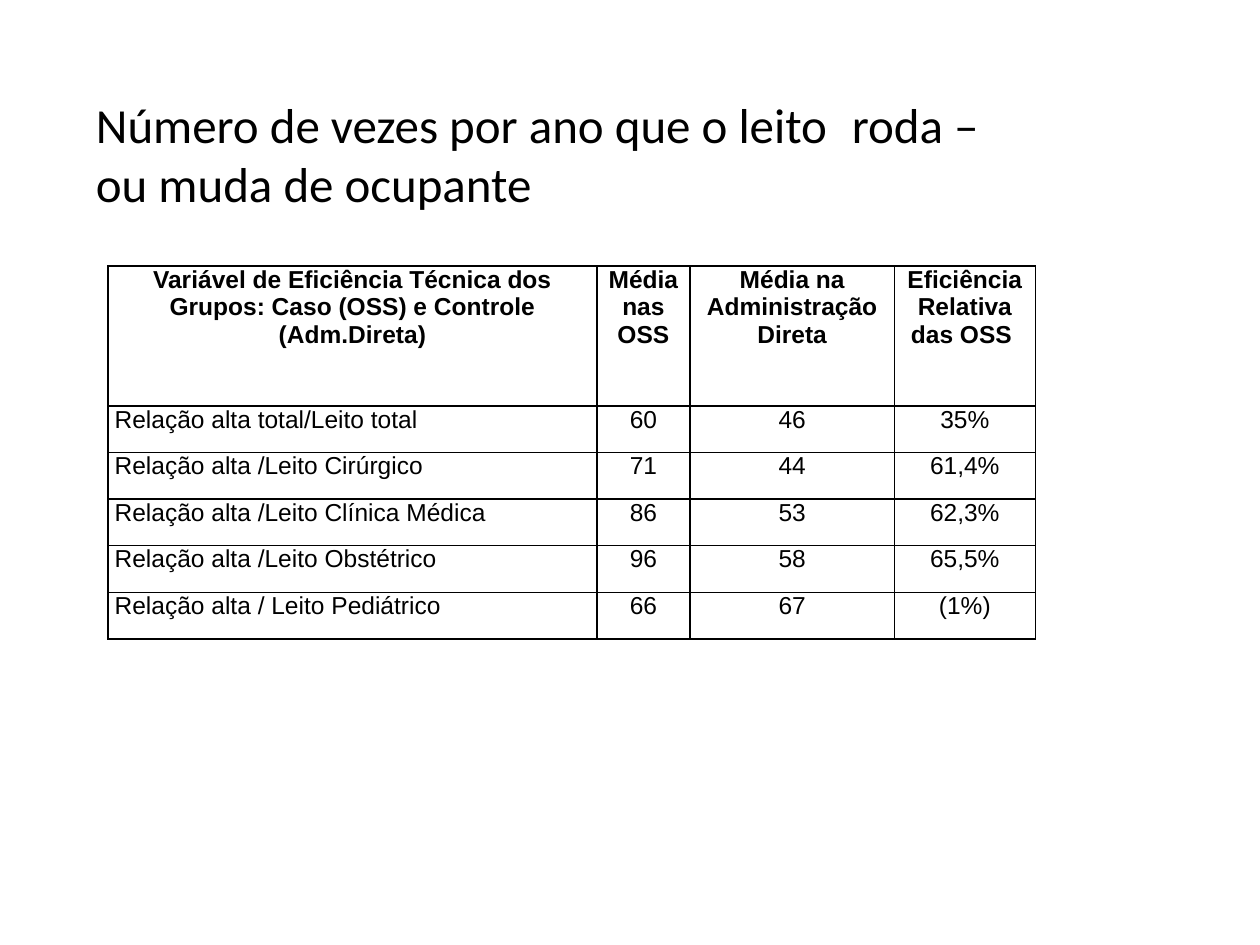
from dataclasses import dataclass

from lxml.etree import SubElement as Sub
from pptx import Presentation as Deck
from pptx.dml.color import RGBColor as Color
from pptx.enum.text import MSO_ANCHOR as Anchor, MSO_AUTO_SIZE as Fit, PP_ALIGN as Align
from pptx.oxml.ns import qn
from pptx.util import Cm, Pt


@dataclass(frozen=True)
class Theme:
    ink: Color = Color(0, 0, 0)
    head: str = "Calibri"
    body: str = "Arial"
    big: int = 28
    small: int = 14
    rule: int = 1


class Page:
    def __init__(self, deck, theme):
        self.theme = theme
        self.slide = deck.slides.add_slide(deck.slide_layouts[5])

    def style(self, para, face, size, bold=False, align=Align.LEFT):
        para.alignment = align
        font = para.font
        font.name, font.size, font.bold = face, Pt(size), bold
        font.color.rgb = self.theme.ink

    def title(self, text, left, top, width, height):
        shape = self.slide.shapes.title
        shape.left, shape.top = Cm(left), Cm(top)
        shape.width, shape.height = Cm(width), Cm(height)
        frame = shape.text_frame
        frame.text = text
        frame.word_wrap = True
        frame.auto_size = Fit.NONE
        frame.vertical_anchor = Anchor.TOP
        self.style(frame.paragraphs[0], self.theme.head, self.theme.big)

    def border(self, cell):
        """Draw a solid rule on all four sides; must come before the fill."""
        props = cell._tc.get_or_add_tcPr()
        for side in "LRTB":
            line = Sub(props, qn(f"a:ln{side}"), w=str(Pt(self.theme.rule)))
            fill = Sub(line, qn("a:solidFill"))
            Sub(fill, qn("a:srgbClr"), val=str(self.theme.ink))

    def table(self, rows, left, top, widths, heights):
        """Place a ruled grid with a bold first row and left-set row labels."""
        grid = self.slide.shapes.add_table(
            len(rows), len(widths), Cm(left), Cm(top),
            Cm(sum(widths)), Cm(sum(heights))).table
        grid.first_row = grid.horz_banding = False
        for col, width in zip(grid.columns, widths):
            col.width = Cm(width)
        for row, height in zip(grid.rows, heights):
            row.height = Cm(height)
        for r, row in enumerate(rows):
            for c, text in enumerate(row):
                cell = grid.cell(r, c)
                cell.text = text
                cell.margin_left = cell.margin_right = Cm(0.13)
                cell.margin_top = cell.margin_bottom = 0
                self.border(cell)
                cell.fill.background()
                label = r > 0 and c == 0
                self.style(cell.text_frame.paragraphs[0], self.theme.body,
                           self.theme.small, r == 0,
                           Align.LEFT if label else Align.CENTER)


ROWS = [
    ("Variável de Eficiência Técnica dos Grupos: Caso (OSS) e Controle (Adm.Direta)",
     "Média nas OSS", "Média na Administração Direta", "Eficiência Relativa das OSS "),
    ("Relação alta total/Leito total", "60", "46", "35%"),
    ("Relação alta /Leito Cirúrgico", "71", "44", "61,4%"),
    ("Relação alta /Leito Clínica Médica", "86", "53", "62,3%"),
    ("Relação alta /Leito Obstétrico", "96", "58", "65,5%"),
    ("Relação alta / Leito Pediátrico", "66", "67", "(1%)"),
]


def main():
    deck = Deck()
    deck.slide_width, deck.slide_height = Cm(25.4), Cm(19.05)
    page = Page(deck, Theme())
    page.title("Número de vezes por ano que o leito \troda – ou muda de ocupante",
               1.68, 1.78, 19.2, 2.62)
    page.table(ROWS, 2.18, 5.36, [9.85, 1.88, 4.12, 2.84],
               [2.82] + [0.94] * (len(ROWS) - 1))
    deck.save("out.pptx")


if __name__ == "__main__":
    main()
